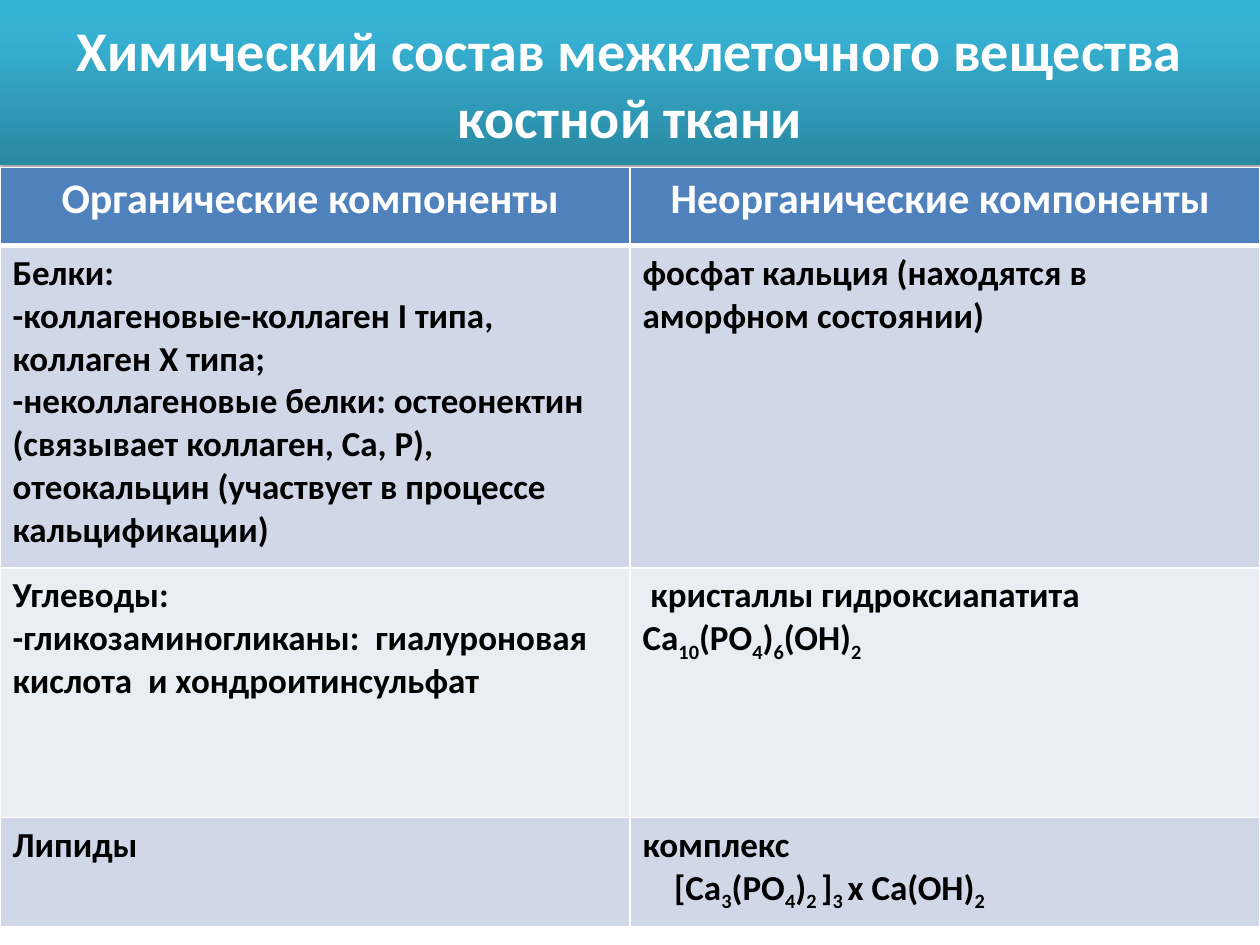
from lxml import etree
from pptx import Presentation
from pptx import util as u
from pptx.dml.color import RGBColor
from pptx.enum import shapes, text
from pptx.oxml import parse_xml
from pptx.oxml.ns import qn

NS = 'xmlns:a="http://schemas.openxmlformats.org/drawingml/2006/main"'
HUES = {"white": "FFFFFF", "black": "000000", "head": "4F81BD",
        "odd": "D0D8E8", "even": "E9EDF4"}
STOPS = [(0, "2A88A2"), (80, "37B1D2"), (100, "34B4D6")]
TITLE = "Химический состав межклеточного вещества костной ткани"
# Each cell is a list of paragraphs; text between ~ marks is subscript
ROWS = [
    (0.62, [["Органические компоненты "], ["Неорганические компоненты "]]),
    (2.56, [["Белки:",
             "-коллагеновые-коллаген I типа, коллаген X типа;",
             "-неколлагеновые белки: остеонектин (связывает коллаген, Ca, P),  "
             "отеокальцин (участвует в процессе кальцификации)"],
            ["фосфат кальция (находятся в аморфном состоянии)"]]),
    (1.98, [["Углеводы:",
             "-гликозаминогликаны:  гиалуроновая кислота  и хондроитинсульфат"],
            [" кристаллы гидроксиапатита Ca~10~(PO~4~)~6~(OH)~2~"]]),
    (0.87, [["Липиды"],
            ["комплекс", "[Ca~3~(PO~4~)~2 ~]~3 ~х Ca(OH)~2~"]]),
]


def rgb(name):
    return RGBColor.from_string(HUES[name])


def write(para, words, size, hue, align=None):
    para.alignment = align
    for i, part in enumerate(words.split("~")):
        if not part:
            continue
        run = para.add_run()
        run.text = part
        font = run.font
        font.name, font.size, font.bold = "Calibri", u.Pt(size), True
        font.color.rgb = rgb(hue)
        if i % 2:
            font._element.set("baseline", "-25000")


def edge(cell, side, width):
    line = parse_xml(
        f'<a:{side} {NS} w="{u.Pt(width)}"><a:solidFill>'
        f'<a:srgbClr val="{HUES["white"]}"/></a:solidFill></a:{side}>')
    return line


def add_title(slide, left, top, width, height):
    bar = slide.shapes.add_shape(shapes.MSO_SHAPE.RECTANGLE,
                                 left, top, width, height)
    bar.line.fill.background()
    # Gradient and soft shadow
    stops = "".join(f'<a:gs pos="{pos * 1000}"><a:srgbClr val="{hue}"/></a:gs>'
                    for pos, hue in STOPS)
    grad = parse_xml(f'<a:gradFill {NS} rotWithShape="1"><a:gsLst>{stops}</a:gsLst>'
                     '<a:lin ang="16200000" scaled="0"/></a:gradFill>')
    props = bar._element.spPr
    props.find(qn("a:prstGeom")).addnext(grad)
    glow = etree.SubElement(props, qn("a:effectLst"))
    glow.append(parse_xml(
        f'<a:outerShdw {NS} blurRad="{u.Pt(3.1)}" dist="{u.Pt(1.8)}" '
        'dir="5400000" rotWithShape="0"><a:srgbClr val="000000">'
        '<a:alpha val="35000"/></a:srgbClr></a:outerShdw>'))
    # Heading
    frame = bar.text_frame
    frame.word_wrap = True
    frame.vertical_anchor = text.MSO_ANCHOR.MIDDLE
    write(frame.paragraphs[0], TITLE, 32, "white", text.PP_ALIGN.CENTER)


def fill_cell(cell, lines, row):
    head = row == 0
    cell.fill.solid()
    cell.fill.fore_color.rgb = rgb("head" if head else "odd" if row % 2 else "even")
    # Borders come before the fill in the cell properties
    props = cell._tc.get_or_add_tcPr()
    for i, side in enumerate(("lnL", "lnR", "lnT", "lnB")):
        thick = (head and side == "lnB") or (row == 1 and side == "lnT")
        props.insert(i, edge(cell, side, 3 if thick else 1))
    frame = cell.text_frame
    for i, words in enumerate(lines):
        para = frame.paragraphs[0] if i == 0 else frame.add_paragraph()
        if head:
            write(para, words, 24, "white", text.PP_ALIGN.CENTER)
        else:
            write(para, words, 20, "black")
        if words.startswith("["):
            para._p.get_or_add_pPr().set("marL", str(u.Inches(0.25)))


def add_grid(slide, left, top, width):
    height = u.Inches(sum(tall for tall, _ in ROWS))
    grid = slide.shapes.add_table(len(ROWS), 2, left, top, width, height).table
    for row, (tall, cells) in enumerate(ROWS):
        grid.rows[row].height = u.Inches(tall)
        for col, lines in enumerate(cells):
            fill_cell(grid.cell(row, col), lines, row)


def main():
    deck = Presentation()
    deck.slide_width, deck.slide_height = u.Inches(10), u.Inches(7.5)
    slide = deck.slides.add_slide(deck.slide_layouts[6])
    add_title(slide, 0, 0, deck.slide_width, u.Inches(1.31))
    add_grid(slide, 0, u.Inches(1.33), deck.slide_width)
    deck.save("out.pptx")


if __name__ == "__main__":
    main()
